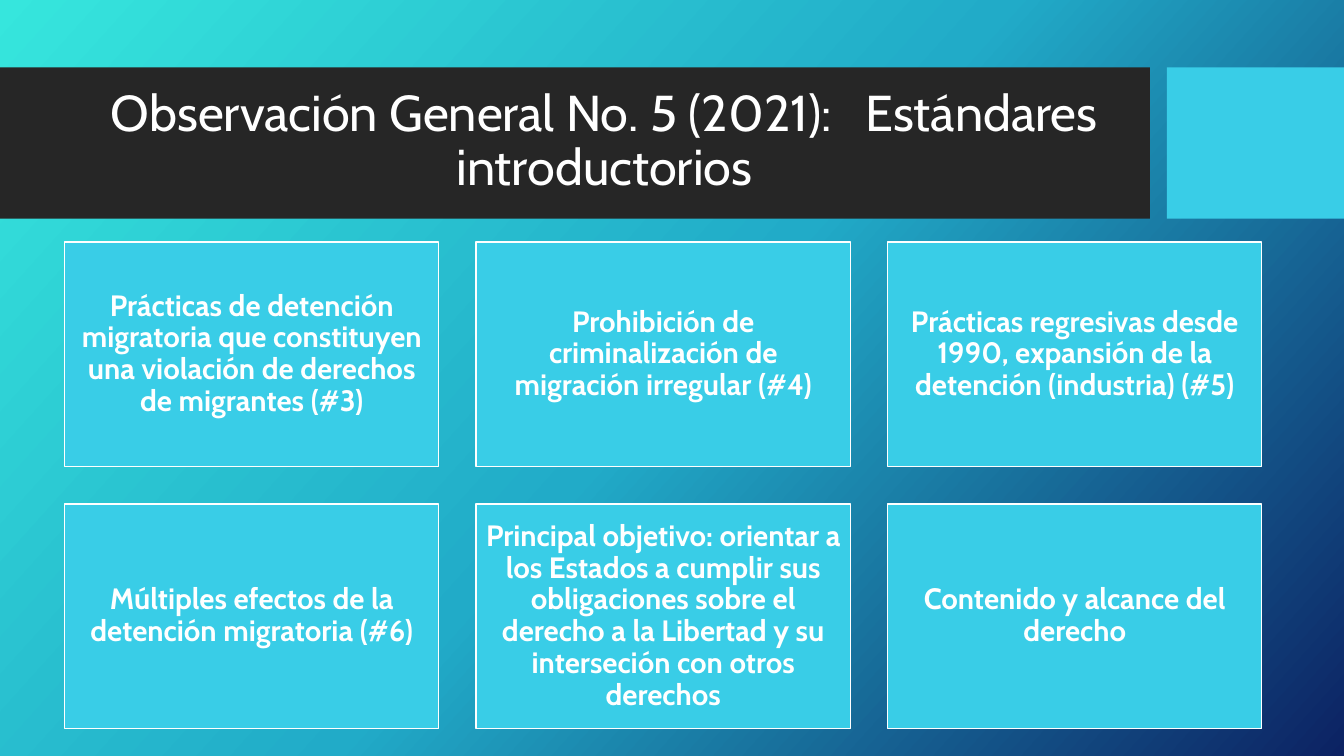
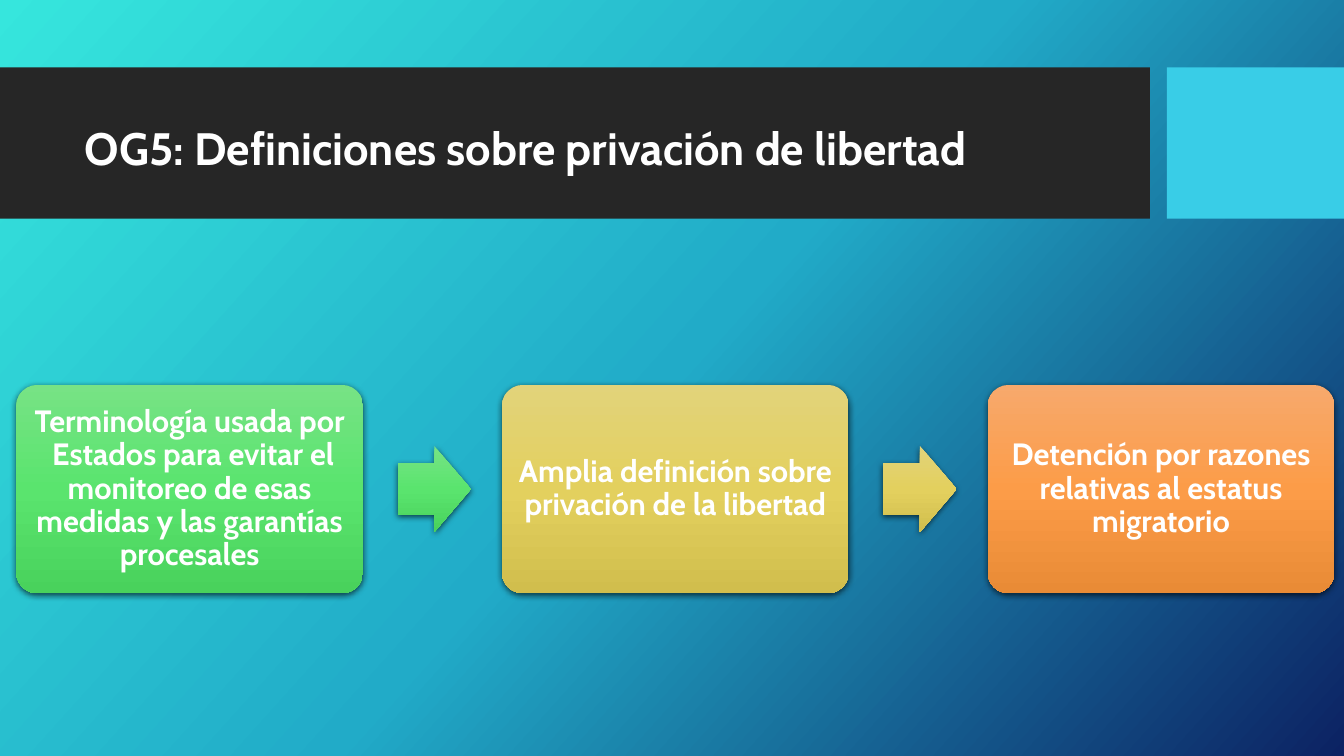
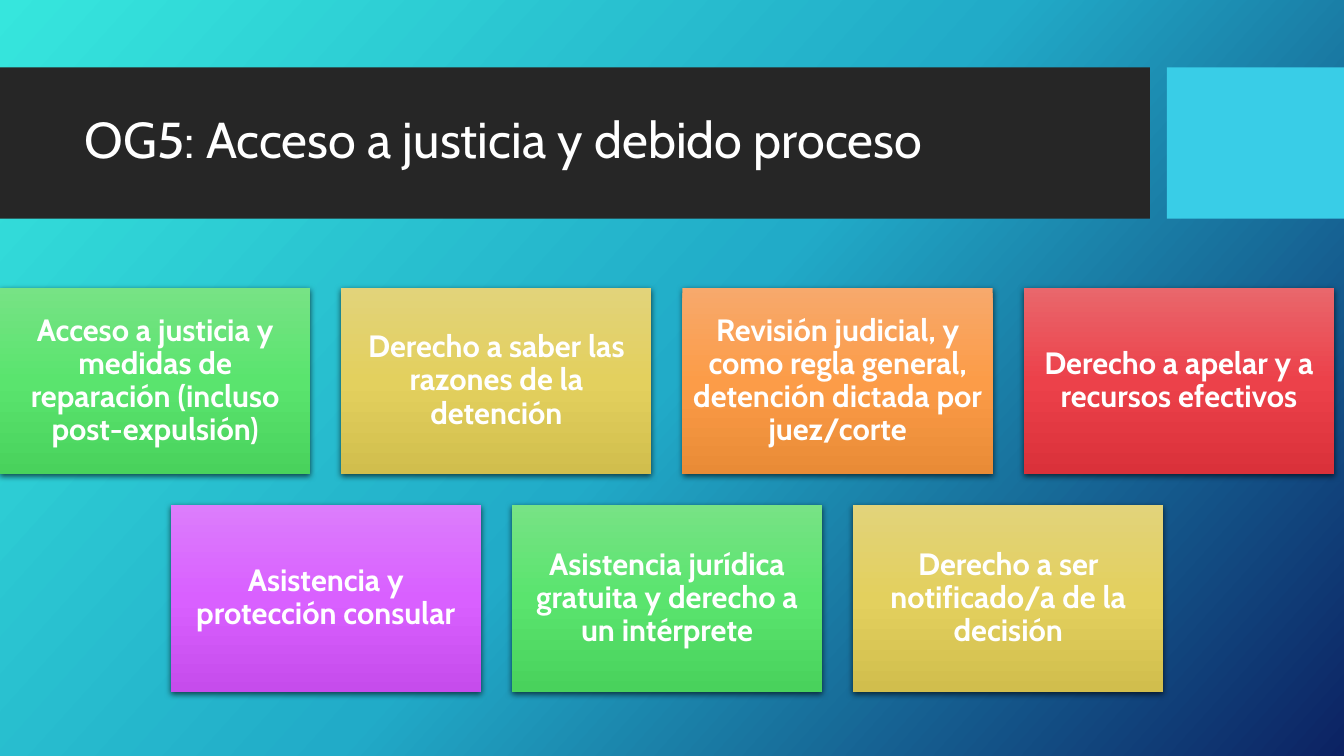
from lxml import etree
from pptx import Presentation
from pptx import util as u
from pptx.dml.color import RGBColor
from pptx.enum import shapes, text
from pptx.oxml import ns

COLOURS = {"white": "FFFFFF", "band": "262626", "cyan": "39CDE7", "shadow": "000000"}
GRADIENTS = {
    "background": ("36E6DD", "21ABC8", "0C2263"),
    "green": ("77E385", "5AE46E", "49D25C"),
    "yellow": ("E2D37A", "E3D05E", "D1BE4D"),
    "orange": ("F7A96C", "FC9C48", "E98B36"),
    "red": ("E9676C", "EC414A", "DA313A"),
    "purple": ("DC7DFC", "D960FF", "C64CEC"),
}
FONT = "Cabin"
TITLE_ONLY = 5
RECTANGLE = shapes.MSO_SHAPE.RECTANGLE


def rgb(name):
    return RGBColor.from_string(COLOURS[name])


def add_element(parent, tag, **attributes):
    return etree.SubElement(parent, ns.qn(tag), **attributes)


class Deck:
    """Holds the shared style and the current slide."""

    def __init__(self):
        self.presentation = Presentation()
        self.presentation.slide_width = u.Cm(33.87)
        self.presentation.slide_height = u.Cm(19.05)
        self.layout = self.presentation.slide_layouts[TITLE_ONLY]
        self.slide = None
        self.gradient(self.layout.background.fill, self.layout.element, "background", 42)

    def new_slide(self, title, top=2.08, height=3, size=36, bold=False,
                  align=text.PP_ALIGN.LEFT):
        first = self.slide is None
        self.slide = self.presentation.slides.add_slide(self.layout)
        if first:
            self.layout_bands()
        shape = self.slide.shapes.title
        shape.left, shape.top = u.Cm(1.88), u.Cm(top)
        shape.width, shape.height = u.Cm(26.7), u.Cm(height)
        self.set_text(shape, title, size, bold, align)

    def layout_bands(self):
        """Draw the title band and its accent, then move them to the layout."""
        for left, width, colour in ((0, 28.98, "band"), (29.41, 4.46, "cyan")):
            band = self.shape(RECTANGLE, left, 1.7, width, 3.81)
            self.solid(band, colour)
            self.layout.shapes.element.append(band.element)

    def shape(self, kind, left, top, width, height):
        shape = self.slide.shapes.add_shape(
            kind, u.Cm(left), u.Cm(top), u.Cm(width), u.Cm(height))
        shape.shadow.inherit = False
        shape.line.fill.background()
        return shape

    def solid(self, shape, colour):
        shape.fill.solid()
        shape.fill.fore_color.rgb = rgb(colour)

    def gradient(self, fill, element, name, angle):
        """Three even stops; the angle runs clockwise."""
        fill.gradient()
        fill.gradient_angle = 360 - angle
        stops = element.find(".//" + ns.qn("a:gsLst"))
        stops.clear()
        for index, colour in enumerate(GRADIENTS[name]):
            stop = add_element(stops, "a:gs", pos=str(index * 50000))
            add_element(stop, "a:srgbClr", val=colour)

    def glossy(self, shape, name):
        """Vertical gradient with a soft shadow below."""
        self.gradient(shape.fill, shape.element, name, 90)
        effects = shape.element.find(".//" + ns.qn("a:effectLst"))
        shadow = add_element(effects, "a:outerShdw", blurRad=str(u.Pt(4.5)),
                             dist=str(u.Pt(1.5)), dir="5400000",
                             algn="ctr", rotWithShape="0")
        colour = add_element(shadow, "a:srgbClr", val=COLOURS["shadow"])
        add_element(colour, "a:alpha", val="63000")

    def set_text(self, shape, words, size, bold, align):
        frame = shape.text_frame
        frame.word_wrap = True
        frame.auto_size = text.MSO_AUTO_SIZE.NONE
        frame.vertical_anchor = text.MSO_ANCHOR.MIDDLE
        paragraph = frame.paragraphs[0]
        paragraph.alignment = align
        paragraph.line_spacing = 0.9
        run = paragraph.add_run()
        run.text = words
        run.font.name, run.font.size, run.font.bold = FONT, u.Pt(size), bold
        run.font.color.rgb = rgb("white")

    def card(self, words, left, top, width, height, size=22, kind=RECTANGLE):
        card = self.shape(kind, left, top, width, height)
        frame = card.text_frame
        frame.margin_left = frame.margin_right = u.Cm(0.23)
        frame.margin_top = frame.margin_bottom = u.Cm(0.23)
        self.set_text(card, words, size, True, text.PP_ALIGN.CENTER)
        return card

    def outlined_card(self, words, left, top, width, height):
        card = self.card(words, left, top, width, height, size=21)
        self.solid(card, "cyan")
        card.line.color.rgb = rgb("white")
        card.line.width = u.Pt(1)

    def glossy_card(self, words, colour, left, top, width, height):
        self.glossy(self.card(words, left, top, width, height), colour)

    def step(self, words, colour, left, top, width, height):
        card = self.card(words, left, top, width, height,
                         kind=shapes.MSO_SHAPE.ROUNDED_RECTANGLE)
        card.adjustments[0] = 0.1
        self.glossy(card, colour)

    def arrow(self, colour, left, top, width, height):
        arrow = self.shape(shapes.MSO_SHAPE.RIGHT_ARROW, left, top, width, height)
        arrow.adjustments[0], arrow.adjustments[1] = 0.6, 0.5
        self.glossy(arrow, colour)


def introduction(deck):
    deck.new_slide("Observación General No. 5 (2021):   Estándares introductorios",
                   align=text.PP_ALIGN.CENTER)
    standards = (
        "Prácticas de detención migratoria que constituyen una violación de "
        "derechos de migrantes (#3)",
        "Prohibición de criminalización de migración irregular (#4)",
        "Prácticas regresivas desde 1990, expansión de la detención (industria) (#5)",
        "Múltiples efectos de la detención migratoria (#6)",
        "Principal objetivo: orientar a los Estados a cumplir sus obligaciones "
        "sobre el derecho a la Libertad y su interseción con otros derechos",
        "Contenido y alcance del derecho",
    )
    for index, words in enumerate(standards):
        row, column = divmod(index, 3)
        deck.outlined_card(words, 1.63 + column * 10.37, 6.1 + row * 6.6, 9.43, 5.66)


def definitions(deck):
    deck.new_slide("OG5: Definiciones sobre privación de libertad",
                   top=2.49, height=2.62, size=32.4, bold=True)
    steps = (
        ("green", "Terminología usada por  Estados para evitar el monitoreo de "
                  "esas medidas y las garantías procesales"),
        ("yellow", "Amplia definición sobre privación de la libertad"),
        ("orange", "Detención por razones relativas al estatus migratorio"),
    )
    for index, (colour, words) in enumerate(steps):
        left = 0.41 + index * 12.24
        deck.step(words, colour, left, 9.7, 8.74, 5.25)
        if index < len(steps) - 1:
            deck.arrow(colour, left + 9.61, 11.24, 1.85, 2.17)


def access_to_justice(deck):
    deck.new_slide("OG5: Acceso a justicia y debido proceso")
    rows = (
        (("green", "Acceso a justicia y medidas de reparación (incluso post-expulsión)"),
         ("yellow", "Derecho a saber las razones de la detención"),
         ("orange", "Revisión judicial, y como regla general, detención dictada "
                    "por juez/corte"),
         ("red", "Derecho a apelar y a recursos efectivos")),
        (("purple", "Asistencia y protección consular"),
         ("green", "Asistencia jurídica gratuita y derecho a un intérprete"),
         ("yellow", "Derecho a ser notificado/a de la decisión")),
    )
    pitch = 8.6
    for row, cards in enumerate(rows):
        # A shorter row is centred under the full one
        start = (len(rows[0]) - len(cards)) * pitch / 2
        for column, (colour, words) in enumerate(cards):
            deck.glossy_card(words, colour, start + column * pitch,
                             7.25 + row * 5.48, 7.82, 4.7)


def main():
    deck = Deck()
    introduction(deck)
    definitions(deck)
    access_to_justice(deck)
    deck.presentation.save("out.pptx")


if __name__ == "__main__":
    main()
